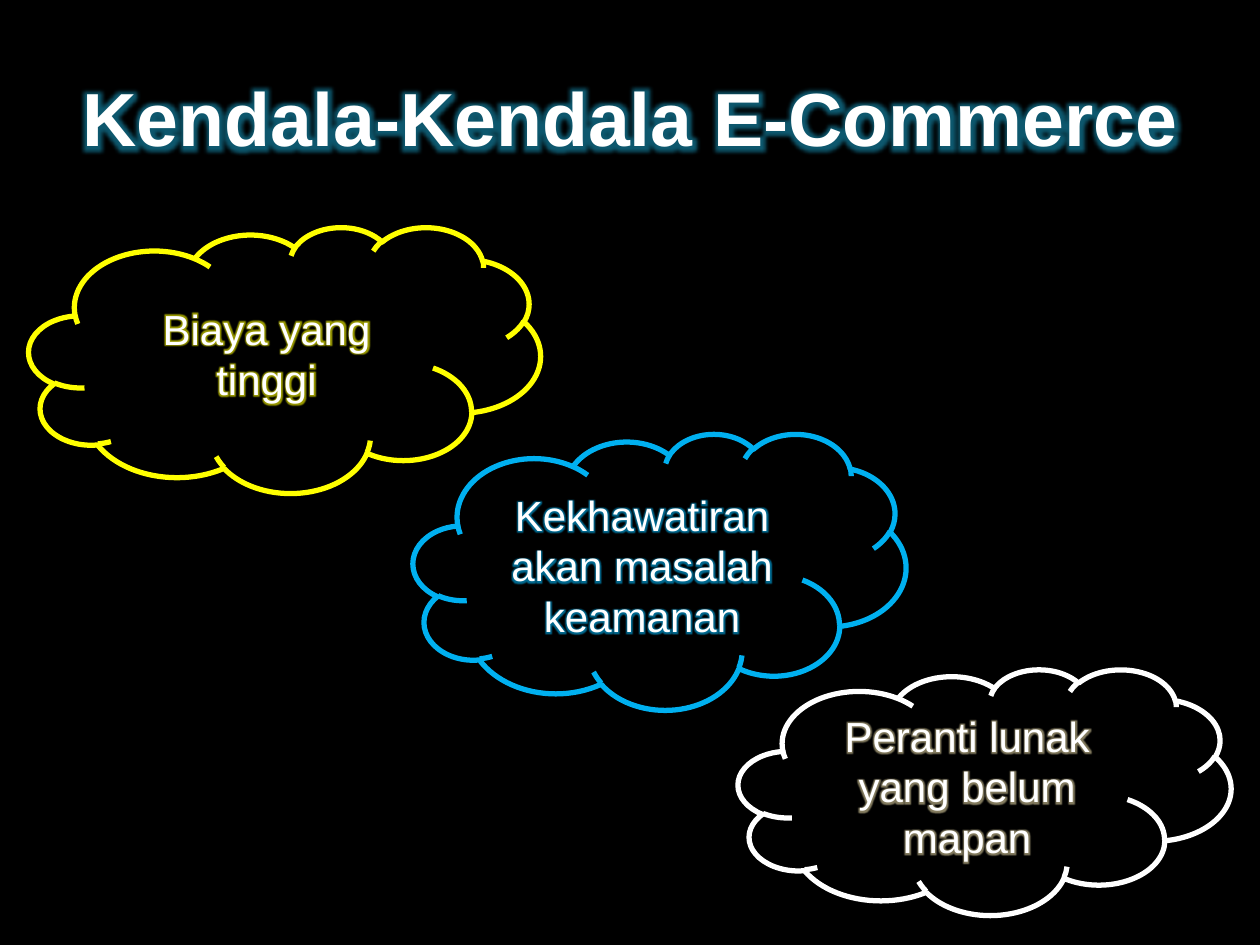
"""Build a slide of three clouds that name the obstacles of e-commerce."""
from dataclasses import dataclass

from lxml import etree
from pptx import Presentation
from pptx.dml.color import RGBColor
from pptx.enum.shapes import MSO_SHAPE
from pptx.enum.text import MSO_ANCHOR, MSO_AUTO_SIZE, PP_ALIGN
from pptx.oxml.ns import qn
from pptx.util import Inches, Pt

CLOUD = MSO_SHAPE.CLOUD
MIDDLE = MSO_ANCHOR.MIDDLE
CENTER = PP_ALIGN.CENTER
FIXED = MSO_AUTO_SIZE.NONE
WIDTH, HEIGHT = Inches(10), Inches(7.5)


@dataclass(frozen=True)
class Theme:
    """Colours, font and sizes of the slide."""
    back: str = "000000"
    ink: str = "FFFFFF"
    teal: str = "18A0C8"
    blue: str = "00B0F0"
    yellow: str = "FFFF00"
    cream: str = "DDD0A0"
    font: str = "Arial"
    head: float = 43
    body: float = 24
    line: float = 3


@dataclass(frozen=True)
class Box:
    """A box in percent of the slide's width and height."""
    left: float
    top: float
    width: float
    height: float

    def place(self) -> tuple[int, int, int, int]:
        """Return the box as lengths on the slide."""
        sides = (WIDTH, HEIGHT, WIDTH, HEIGHT)
        parts = (self.left, self.top, self.width, self.height)
        return tuple(round(side * part / 100) for side, part in zip(sides, parts))


@dataclass(frozen=True)
class Cloud:
    """A cloud with its text, line colour and glow colour."""
    text: str
    box: Box
    line: str
    glow: str


THEME = Theme()
HEAD = Box(5, 4, 90, 16.67)
CLOUDS = (
    Cloud("Kekhawatiran akan masalah keamanan", Box(32.8, 45.87, 39.1, 29.2),
          THEME.blue, THEME.blue),
    Cloud("Biaya yang tinggi", Box(2.3, 24, 40.6, 28.13),
          THEME.yellow, THEME.yellow),
    Cloud("Peranti lunak yang belum mapan", Box(58.6, 70.8, 39.1, 26),
          THEME.ink, THEME.cream),
)


def add_glow(run, color: str, radius: float, alpha: int) -> None:
    """Give a run a glow, with its radius in points and alpha in percent."""
    effect = etree.Element(qn("a:effectLst"))
    glow = etree.SubElement(effect, qn("a:glow"), rad=str(Pt(radius)))
    tint = etree.SubElement(glow, qn("a:srgbClr"), val=color)
    etree.SubElement(tint, qn("a:alpha"), val=str(alpha * 1000))
    run.font._element.find(qn("a:solidFill")).addnext(effect)


def write(shape, text: str, *, size: float, glow: str, radius: float,
          alpha: int, bold: bool = False) -> None:
    """Write centred, glowing text into a shape."""
    frame = shape.text_frame
    frame.word_wrap = True
    frame.auto_size = FIXED
    frame.vertical_anchor = MIDDLE
    para = frame.paragraphs[0]
    para.alignment = CENTER
    run = para.add_run()
    run.text = text
    font = run.font
    font.name, font.size, font.bold = THEME.font, Pt(size), bold
    font.color.rgb = RGBColor.from_string(THEME.ink)
    add_glow(run, glow, radius, alpha)


def draw_cloud(slide, cloud: Cloud) -> None:
    """Draw one cloud with its text."""
    shape = slide.shapes.add_shape(CLOUD, *cloud.box.place())
    shape.shadow.inherit = False
    shape.fill.solid()
    shape.fill.fore_color.rgb = RGBColor.from_string(THEME.back)
    shape.line.color.rgb = RGBColor.from_string(cloud.line)
    shape.line.width = Pt(THEME.line)
    write(shape, cloud.text, size=THEME.body, glow=cloud.glow, radius=5, alpha=60)


def main() -> None:
    """Build and save the slide."""
    deck = Presentation()
    deck.slide_width, deck.slide_height = WIDTH, HEIGHT
    slide = deck.slides.add_slide(deck.slide_layouts[5])
    fill = slide.background.fill
    fill.solid()
    fill.fore_color.rgb = RGBColor.from_string(THEME.back)
    title = slide.shapes.title
    title.left, title.top, title.width, title.height = HEAD.place()
    write(title, "Kendala-Kendala E-Commerce", size=THEME.head,
          glow=THEME.teal, radius=10, alpha=55, bold=True)
    for cloud in CLOUDS:
        draw_cloud(slide, cloud)
    deck.save("out.pptx")


if __name__ == "__main__":
    main()
